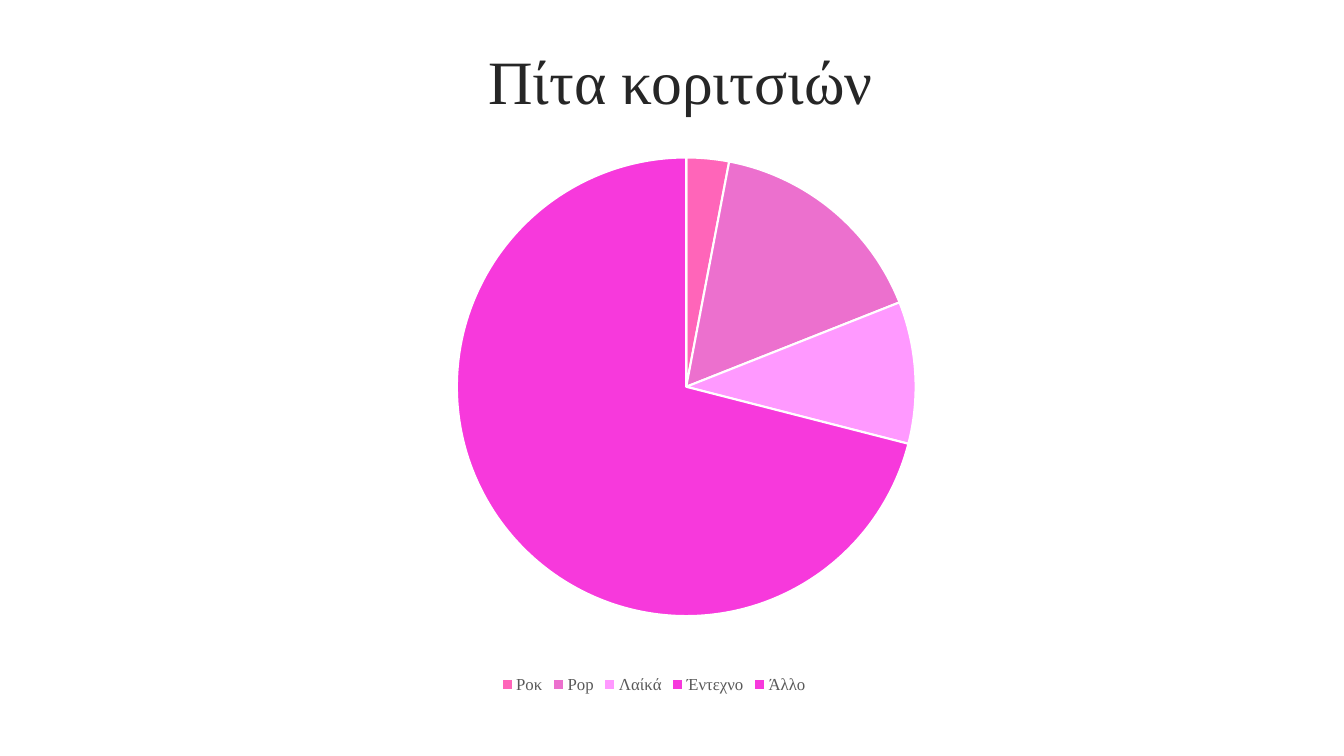
from lxml import etree
from pptx import Presentation
from pptx import util as u
from pptx.chart.data import CategoryChartData
from pptx.dml.color import RGBColor
from pptx.enum import chart as charts, text
from pptx.oxml.ns import qn

FONT = "Times New Roman"
WHITE = RGBColor(0xFF, 0xFF, 0xFF)
TITLE_GREY = RGBColor(0x26, 0x26, 0x26)
LEGEND_GREY = RGBColor(0x59, 0x59, 0x59)
HOT_PINK = RGBColor(0xFF, 0x65, 0xB9)
ORCHID = RGBColor(0xEC, 0x70, 0xCE)
PALE_PINK = RGBColor(0xFF, 0x99, 0xFF)
MAGENTA = RGBColor(0xF7, 0x39, 0xDC)

GENRES = [
    ("Ροκ", 3, HOT_PINK),
    ("Pop", 16, ORCHID),
    ("Λαίκά", 10, PALE_PINK),
    ("Έντεχνο", 0, MAGENTA),
    ("Άλλο", 71, MAGENTA),
]


class SlideBuilder:
    def __init__(self, presentation):
        self.slide = presentation.slides.add_slide(presentation.slide_layouts[5])
        self.slide.background.fill.solid()
        self.slide.background.fill.fore_color.rgb = WHITE

    def style(self, font, size, color):
        font.name = FONT
        font.size = u.Pt(size)
        font.color.rgb = color

    def title(self, words, left, top, width, height):
        shape = self.slide.shapes.title
        shape.left, shape.top = u.Inches(left), u.Inches(top)
        shape.width, shape.height = u.Inches(width), u.Inches(height)
        frame = shape.text_frame
        frame.word_wrap = True
        frame.vertical_anchor = text.MSO_ANCHOR.MIDDLE
        paragraph = frame.paragraphs[0]
        paragraph.alignment = text.PP_ALIGN.CENTER
        run = paragraph.add_run()
        run.text = words
        self.style(run.font, 44, TITLE_GREY)

    def pie(self, name, slices, left, top, width, height, plot_box):
        data = CategoryChartData()
        data.categories = [label for label, value, color in slices]
        data.add_series(name, [value for label, value, color in slices])
        chart = self.slide.shapes.add_chart(
            charts.XL_CHART_TYPE.PIE, u.Inches(left), u.Inches(top),
            u.Inches(width), u.Inches(height), data).chart
        chart.has_title = False
        self.style(chart.font, 12, LEGEND_GREY)
        chart.has_legend = True
        chart.legend.position = charts.XL_LEGEND_POSITION.BOTTOM
        chart.legend.include_in_layout = False
        self.style(chart.legend.font, 12, LEGEND_GREY)
        plot = chart.plots[0]
        plot.vary_by_categories = True
        for index, (label, value, color) in enumerate(slices):
            point = plot.series[0].points[index]
            point.format.fill.solid()
            point.format.fill.fore_color.rgb = color
            point.format.line.color.rgb = WHITE
            point.format.line.width = u.Pt(1.5)
        self.place_plot(chart, plot_box)

    def place_plot(self, chart, plot_box):
        area = chart.element.find(".//" + qn("c:plotArea"))
        layout = area.find(qn("c:layout"))
        if layout is None:
            layout = etree.Element(qn("c:layout"))
            area.insert(0, layout)
        manual = etree.SubElement(layout, qn("c:manualLayout"))
        settings = [("layoutTarget", "inner"), ("xMode", "edge"), ("yMode", "edge")]
        settings += zip("xywh", plot_box)
        for tag, value in settings:
            etree.SubElement(manual, qn("c:" + tag)).set("val", str(value))


def main():
    presentation = Presentation()
    presentation.slide_width = u.Inches(13.33)
    presentation.slide_height = u.Inches(7.5)
    builder = SlideBuilder(presentation)
    builder.title("Πίτα κοριτσιών", 1, 0, 11.5, 1.58)
    builder.pie("Series 1", GENRES, 1.12, 1.16, 10.73, 5.76, (0.1, 0.07, 0.86, 0.79))
    presentation.save("out.pptx")


if __name__ == "__main__":
    main()
